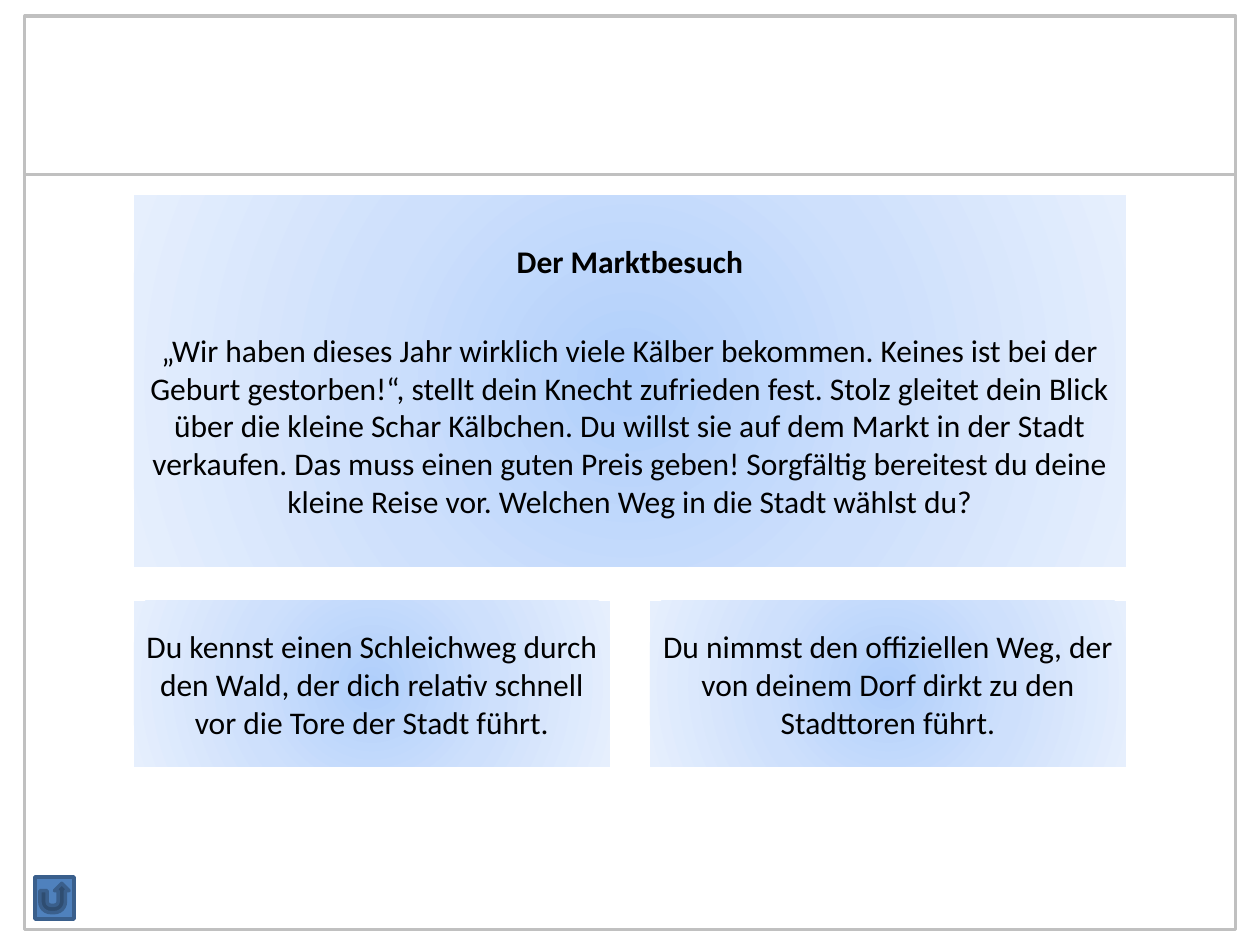
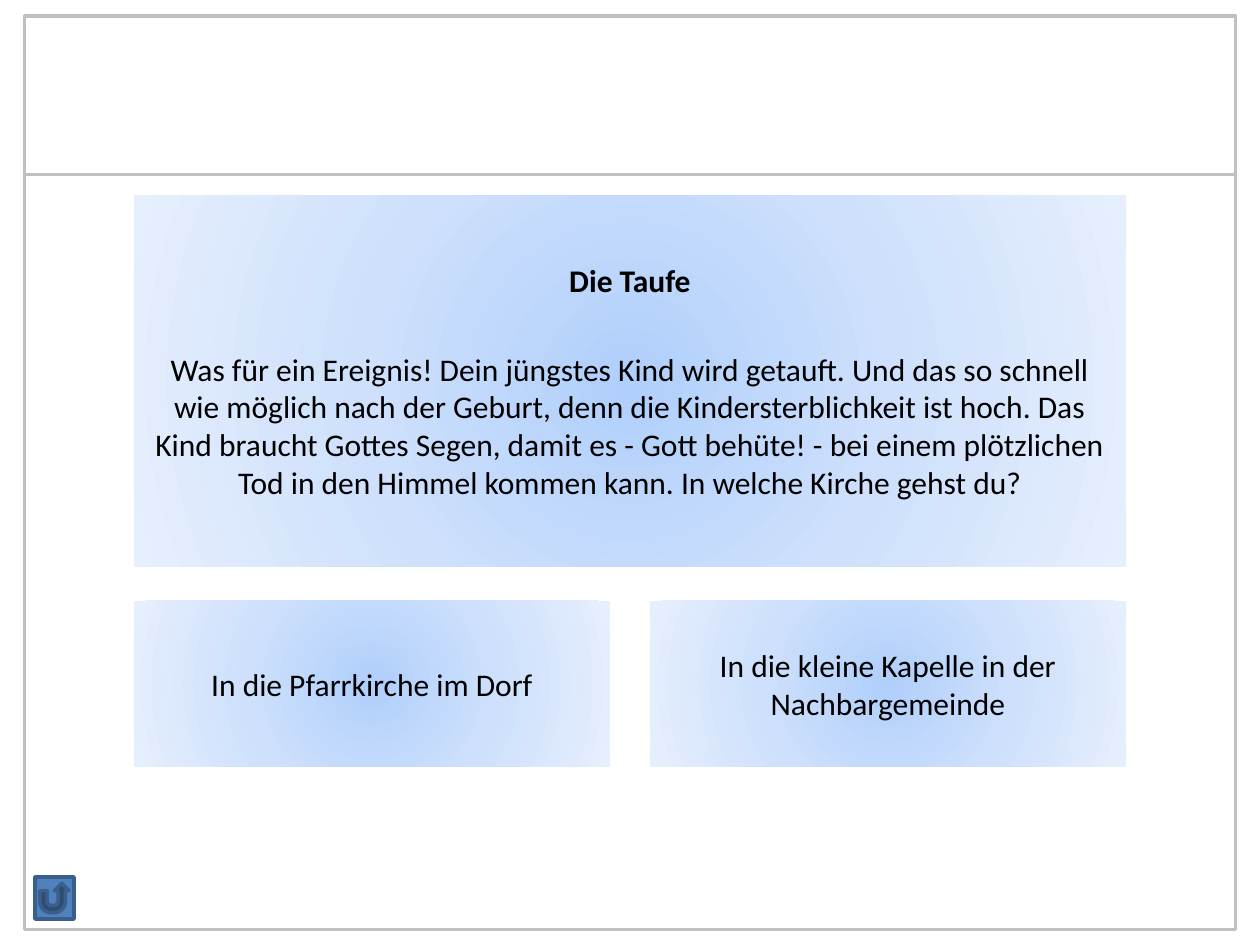
"""Build two story slides, each with a tale and two choices."""
from typing import NamedTuple

from pptx import Presentation
from pptx import util as u
from pptx.dml.color import RGBColor
from pptx.enum import shapes, text
from pptx.oxml import parse_xml
from pptx.oxml.ns import nsdecls

SCALE = 914400 / 126
FONT, SIZE, INK = "Calibri", 18, "000000"
RULE, BLUE, EDGE = "C0C0C0", "4F81BD", "3A5F8C"
GLOW = ((0, "B0CFFB"), (50, "CEE0FC"), (100, "E6EFFD"))
KIND = shapes.MSO_SHAPE


class Box(NamedTuple):
    left: int
    top: int
    width: int
    height: int


class Part(NamedTuple):
    words: str
    bold: bool = False
    gap: int = 0


class Card(NamedTuple):
    head: str
    tale: str
    picks: tuple[str, str]


FRAMES = (Box(25, 16, 1211, 159), Box(25, 175, 1211, 755))
STORY = Box(134, 195, 992, 372)
PICK = Box(134, 601, 476, 166)
STEP = STORY.width - PICK.width
BACK = Box(35, 877, 39, 42)

CARDS = (
    Card(
        "Der Marktbesuch",
        "„Wir haben dieses Jahr wirklich viele Kälber bekommen. Keines ist bei der "
        "Geburt gestorben!“, stellt dein Knecht zufrieden fest. Stolz gleitet dein "
        "Blick über die kleine Schar Kälbchen. Du willst sie auf dem Markt in der "
        "Stadt verkaufen. Das muss einen guten Preis geben! Sorgfältig bereitest du "
        "deine kleine Reise vor. Welchen Weg in die Stadt wählst du?",
        (
            "Du kennst einen Schleichweg durch den Wald, der dich relativ schnell "
            "vor die Tore der Stadt führt.",
            "Du nimmst den offiziellen Weg, der von deinem Dorf dirkt zu den "
            "Stadttoren führt.",
        ),
    ),
    Card(
        "Die Taufe",
        "Was für ein Ereignis! Dein jüngstes Kind wird getauft. Und das so schnell "
        "wie möglich nach der Geburt, denn die Kindersterblichkeit ist hoch. Das "
        "Kind braucht Gottes Segen, damit es - Gott behüte! - bei einem plötzlichen "
        "Tod in den Himmel kommen kann. In welche Kirche gehst du?",
        (
            "In die Pfarrkirche im Dorf",
            "In die kleine Kapelle in der Nachbargemeinde",
        ),
    ),
)


def px(count: int) -> u.Emu:
    return u.Emu(round(count * SCALE))


def tint(code: str) -> RGBColor:
    return RGBColor.from_string(code)


def draw(slide, kind, box: Box):
    shape = slide.shapes.add_shape(kind, *map(px, box))
    shape.shadow.inherit = False
    return shape


def rim(shape, code: str, width: float) -> None:
    shape.line.color.rgb = tint(code)
    shape.line.width = u.Pt(width)


def glow(shape) -> None:
    stops = "".join(
        f'<a:gs pos="{pos * 1000}"><a:srgbClr val="{code}"/></a:gs>'
        for pos, code in GLOW
    )
    shape.element.spPr.append(parse_xml(
        f'<a:gradFill {nsdecls("a")} rotWithShape="1"><a:gsLst>{stops}</a:gsLst>'
        '<a:path path="circle"><a:fillToRect l="50000" t="50000" r="50000" '
        'b="50000"/></a:path></a:gradFill>'
    ))
    shape.line.fill.background()


def write(shape, parts: list[Part]) -> None:
    frame = shape.text_frame
    frame.word_wrap = True
    frame.auto_size = text.MSO_AUTO_SIZE.NONE
    frame.vertical_anchor = text.MSO_ANCHOR.MIDDLE
    for i, part in enumerate(parts):
        para = frame.add_paragraph() if i else frame.paragraphs[0]
        para.alignment = text.PP_ALIGN.CENTER
        para.space_before = u.Pt(part.gap)
        run = para.add_run()
        run.text = part.words
        run.font.name, run.font.size = FONT, u.Pt(SIZE)
        run.font.bold = part.bold
        run.font.color.rgb = tint(INK)


def share(slide) -> None:
    for box in FRAMES:
        frame = draw(slide, KIND.RECTANGLE, box)
        frame.fill.background()
        rim(frame, RULE, 1.75)
        slide.slide_layout.shapes.element.append(frame.element)


def fill(slide, card: Card) -> None:
    story = slide.shapes.title
    story.left, story.top, story.width, story.height = map(px, STORY)
    glow(story)
    write(story, [Part(card.head, bold=True), Part(card.tale, gap=29)])
    for i, words in enumerate(card.picks):
        pick = draw(slide, KIND.RECTANGLE, PICK._replace(left=PICK.left + i * STEP))
        glow(pick)
        write(pick, [Part(words)])
    back = draw(slide, KIND.ACTION_BUTTON_RETURN, BACK)
    back.fill.solid()
    back.fill.fore_color.rgb = tint(BLUE)
    rim(back, EDGE, 2)


def main() -> None:
    deck = Presentation()
    deck.slide_width, deck.slide_height = px(1260), px(945)
    slides = [deck.slides.add_slide(deck.slide_layouts[5]) for _ in CARDS]
    share(slides[0])
    for slide, card in zip(slides, CARDS):
        fill(slide, card)
    deck.save("out.pptx")


if __name__ == "__main__":
    main()
